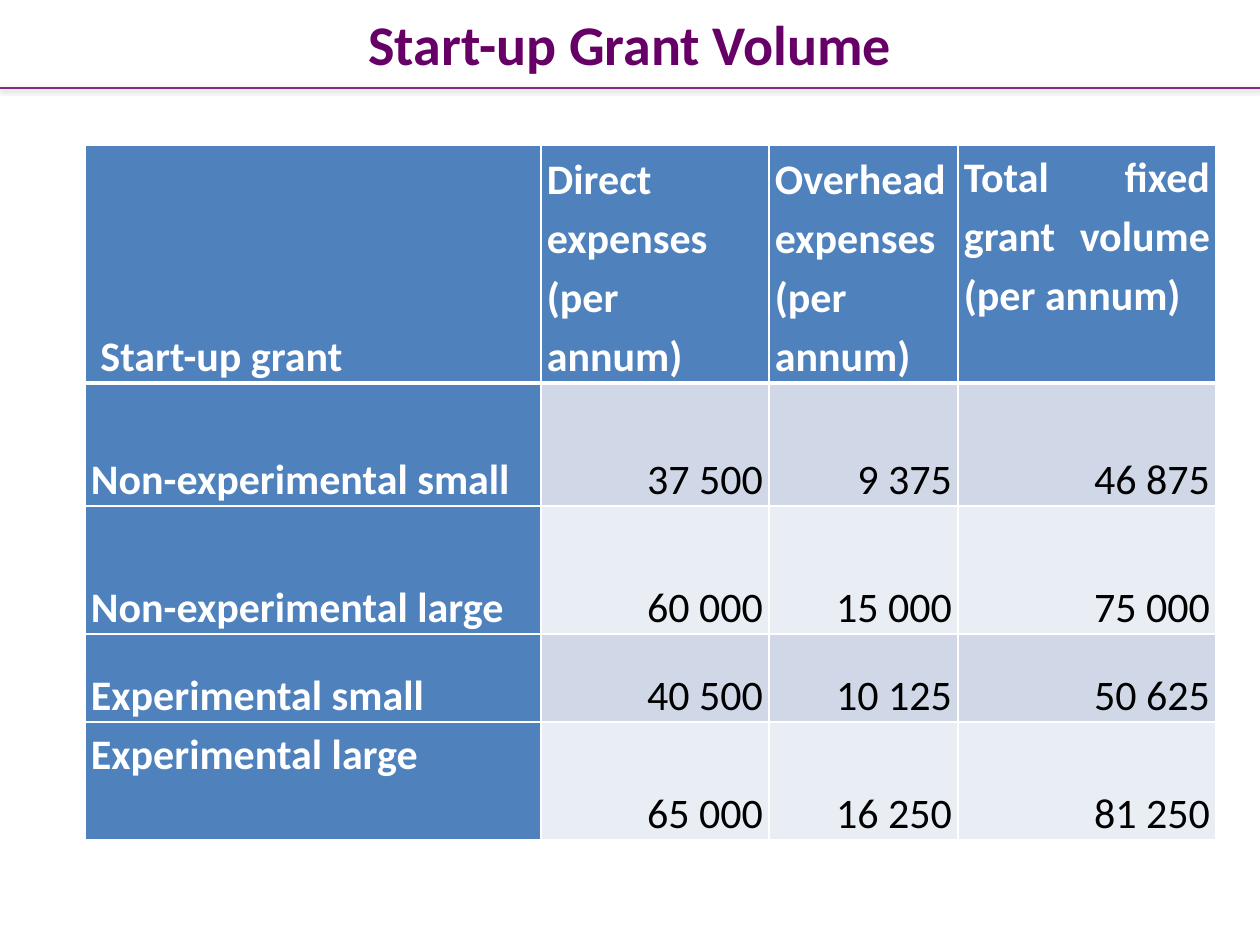
from lxml.etree import SubElement
from pptx import Presentation
from pptx.dml.color import RGBColor
from pptx.enum.shapes import MSO_CONNECTOR
from pptx.enum.text import MSO_ANCHOR, PP_ALIGN
from pptx.oxml import parse_xml
from pptx.oxml.ns import nsdecls, qn
from pptx.util import Pt

PX = 914400 / 126
FONT = "Calibri"
PURPLE, RULE, WHITE, BLACK = "660066", "832B7C", "FFFFFF", "000000"
BLUE, BANDS = "4F81BD", ("D0D8E8", "E9EDF4")

COLUMN_WIDTHS = (456, 228, 189, 258)
ROW_HEIGHTS = (238, 123, 128, 88, 118)
GRANTS = (
    (" Start-up grant", "Direct expenses (per annum)",
     "Overhead expenses (per annum)", "Total fixed grant volume (per annum)"),
    ("Non-experimental small", "37 500", "9 375", "46 875"),
    ("Non-experimental large", "60 000", "15 000", "75 000"),
    ("Experimental small", "40 500", "10 125", "50 625"),
    ("Experimental large", "65 000", "16 250", "81 250"),
)
TOP_CELLS = {(0, 3), (4, 0)}


def px(n):
    return round(n * PX)


def rgb(value):
    return RGBColor.from_string(value)


def write(tf, text, size=24, color=BLACK, bold=False, align=PP_ALIGN.LEFT, spacing=None):
    tf.word_wrap = True
    p = tf.paragraphs[0]
    p.alignment = align
    if spacing:
        p.line_spacing = spacing
    r = p.add_run()
    r.text = text
    r.font.name = FONT
    r.font.size = Pt(size)
    r.font.bold = bold
    r.font.color.rgb = rgb(color)


def add_borders(cell, bottom=1):
    tc_pr = cell._tc.get_or_add_tcPr()
    sides = (("lnL", 1), ("lnR", 1), ("lnT", 1), ("lnB", bottom))
    for i, (side, width) in enumerate(sides):
        tc_pr.insert(i, parse_xml(
            f'<a:{side} {nsdecls("a")} w="{Pt(width)}"><a:solidFill>'
            f'<a:srgbClr val="{WHITE}"/></a:solidFill></a:{side}>'))


def add_shadow(line):
    effects = SubElement(line._element.spPr, qn("a:effectLst"))
    shadow = SubElement(effects, qn("a:outerShdw"), blurRad=str(Pt(3.1)),
                        dist=str(Pt(1)), dir="5400000", rotWithShape="0")
    color = SubElement(shadow, qn("a:srgbClr"), val=BLACK)
    SubElement(color, qn("a:alpha"), val="25000")


def add_heading(s, x, y, w, h):
    """Place the title and the shadowed rule along the bottom of the band."""
    line = s.shapes.add_connector(MSO_CONNECTOR.STRAIGHT, px(x), px(y + h), px(x + w), px(y + h))
    line.line.color.rgb = rgb(RULE)
    line.line.width = Pt(1)
    add_shadow(line)
    margin = 63
    box = s.shapes.add_textbox(px(x + margin), px(y), px(w - 2 * margin), px(h - 2))
    box.text_frame.vertical_anchor = MSO_ANCHOR.MIDDLE
    write(box.text_frame, "Start-up Grant Volume", size=32, color=PURPLE,
          bold=True, align=PP_ALIGN.CENTER)


def add_grant_table(s, x, y):
    table = s.shapes.add_table(len(ROW_HEIGHTS), len(COLUMN_WIDTHS), px(x), px(y),
                               px(sum(COLUMN_WIDTHS)), px(sum(ROW_HEIGHTS))).table
    for column, width in zip(table.columns, COLUMN_WIDTHS):
        column.width = px(width)
    for row, height in zip(table.rows, ROW_HEIGHTS):
        row.height = px(height)
    for i, texts in enumerate(GRANTS):
        for j, text in enumerate(texts):
            cell = table.cell(i, j)
            label = i == 0 or j == 0
            cell.margin_left = cell.margin_right = px(6)
            cell.margin_top = cell.margin_bottom = 0
            cell.vertical_anchor = MSO_ANCHOR.TOP if (i, j) in TOP_CELLS else MSO_ANCHOR.BOTTOM
            cell.fill.solid()
            cell.fill.fore_color.rgb = rgb(BLUE if label else BANDS[(i - 1) % 2])
            add_borders(cell, bottom=3 if i == 0 else 1)
            write(cell.text_frame, text, color=WHITE if label else BLACK, bold=label,
                  align=PP_ALIGN.JUSTIFY if label else PP_ALIGN.RIGHT, spacing=1.15)


def main():
    prs = Presentation()
    prs.slide_width, prs.slide_height = px(1260), px(945)
    s = prs.slides.add_slide(prs.slide_layouts[6])
    add_heading(s, 0, 0, 1260, 88)
    add_grant_table(s, 85, 145)
    prs.save("out.pptx")


if __name__ == "__main__":
    main()
